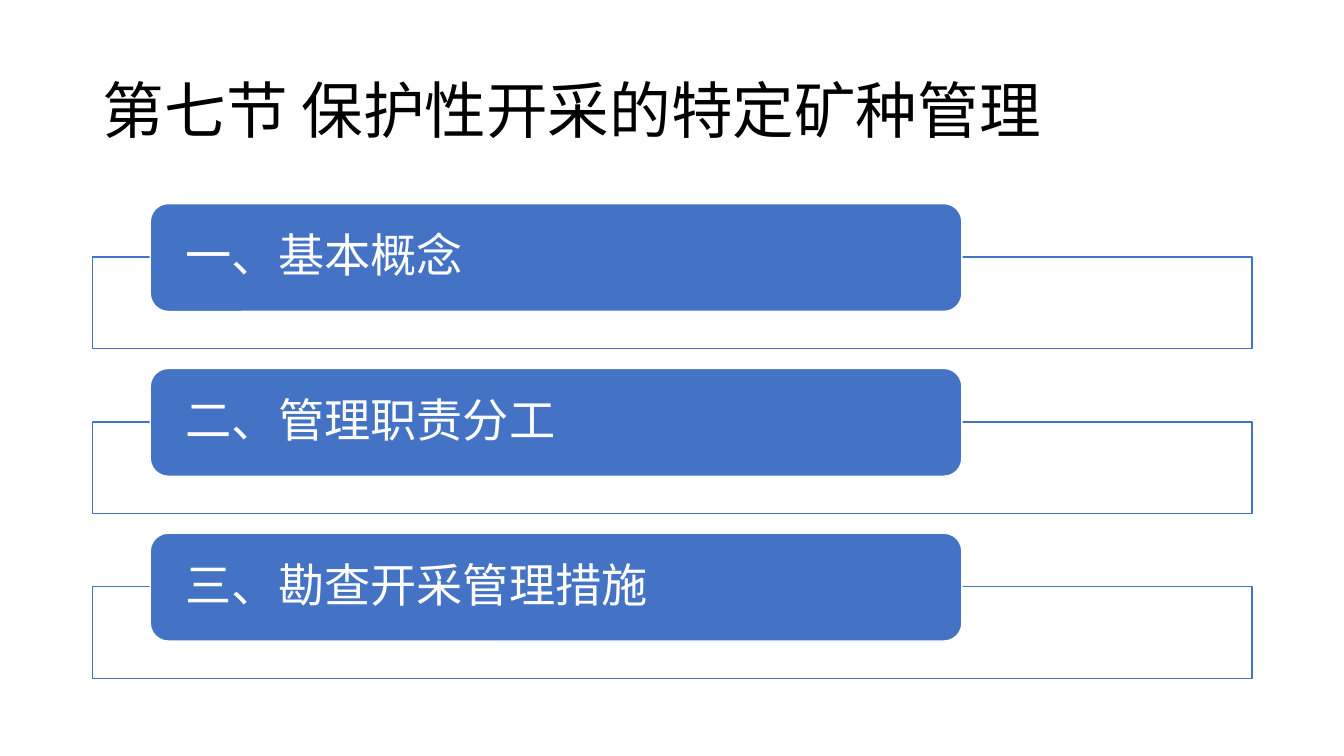
from lxml import etree
from pptx import Presentation
from pptx.dml.color import RGBColor
from pptx.enum import shapes, text
from pptx.oxml import ns
from pptx.util import Inches, Pt

FONT = "Noto Sans CJK SC"
COLORS = {"black": "000000", "white": "FFFFFF", "blue": "4472C4"}
TITLE = "第七节 保护性开采的特定矿种管理"
SECTIONS = ["一、基本概念", "二、管理职责分工", "三、勘查开采管理措施"]

LEFT, WIDTH = 0.92, 11.5
FIRST_TOP, PITCH = 2.02, 1.635


def color(name):
    return RGBColor.from_string(COLORS[name])


def set_text(sp, content, size, fill, inset_x=0.1, inset_y=0.05):
    """Write one left-aligned, vertically centred line into a shape."""
    tf = sp.text_frame
    tf.word_wrap = True
    tf.auto_size = text.MSO_AUTO_SIZE.NONE
    tf.vertical_anchor = text.MSO_ANCHOR.MIDDLE
    tf.margin_left = tf.margin_right = Inches(inset_x)
    tf.margin_top = tf.margin_bottom = Inches(inset_y)
    p = tf.paragraphs[0]
    p.alignment = text.PP_ALIGN.LEFT
    p.line_spacing = 0.9
    r = p.add_run()
    r.text = content
    r.font.size = Pt(size)
    r.font.name = FONT
    r.font.color.rgb = color(fill)
    # East Asian characters take their own typeface setting
    ea = etree.SubElement(r.font._element, ns.qn("a:ea"))
    ea.set("typeface", FONT)


def add_box(s, kind, left, top, width, height, fill, line):
    sp = s.shapes.add_shape(kind, Inches(left), Inches(top),
                            Inches(width), Inches(height))
    sp.shadow.inherit = False
    sp.fill.solid()
    sp.fill.fore_color.rgb = color(fill)
    sp.line.color.rgb = color(line)
    sp.line.width = Pt(1)
    return sp


def add_title(s, content):
    sp = s.shapes.title
    sp.left, sp.top = Inches(LEFT), Inches(0.4)
    sp.width, sp.height = Inches(WIDTH), Inches(1.45)
    set_text(sp, content, 44, "black")


def add_section(s, content, top):
    """Draw an outlined frame with a filled label over its top edge."""
    kinds = shapes.MSO_SHAPE
    add_box(s, kinds.RECTANGLE, LEFT, top + 0.53, WIDTH, 0.91, "white", "blue")
    label = add_box(s, kinds.ROUNDED_RECTANGLE, 1.49, top, 8.05, 1.07,
                    "blue", "white")
    set_text(label, content, 33, "white", inset_x=0.3, inset_y=0)


def main():
    prs = Presentation()
    prs.slide_width, prs.slide_height = Inches(13.33), Inches(7.5)
    s = prs.slides.add_slide(prs.slide_layouts[5])

    # Heading
    add_title(s, TITLE)

    # Section list
    for i, section in enumerate(SECTIONS):
        add_section(s, section, FIRST_TOP + i * PITCH)

    prs.save("out.pptx")


if __name__ == "__main__":
    main()
